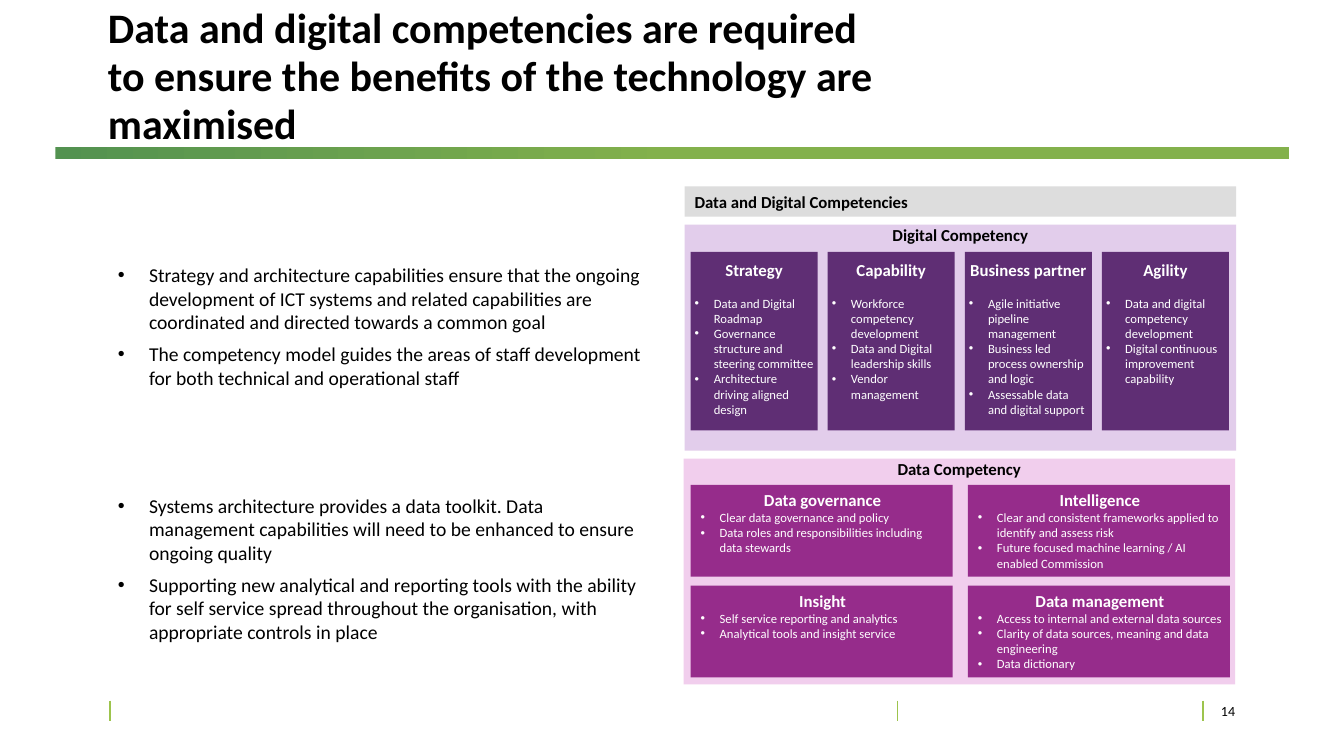
from lxml import etree
from pptx import Presentation
from pptx.dml.color import RGBColor
from pptx.enum.shapes import MSO_CONNECTOR, MSO_SHAPE
from pptx.enum.text import MSO_ANCHOR, MSO_AUTO_SIZE, PP_ALIGN
from pptx.oxml.ns import qn
from pptx.util import Inches, Pt

LEFT, CENTER = PP_ALIGN.LEFT, PP_ALIGN.CENTER
TOP, MIDDLE = MSO_ANCHOR.TOP, MSO_ANCHOR.MIDDLE
RECTANGLE, STRAIGHT = MSO_SHAPE.RECTANGLE, MSO_CONNECTOR.STRAIGHT
NO_AUTOFIT = MSO_AUTO_SIZE.NONE

FONT = "Calibri"
BLACK = RGBColor(0x00, 0x00, 0x00)
WHITE = RGBColor(0xFF, 0xFF, 0xFF)
GREY = RGBColor(0xDD, 0xDD, 0xDD)
LILAC = RGBColor(0xE2, 0xCD, 0xEB)
PINK = RGBColor(0xF1, 0xCE, 0xED)
PURPLE = RGBColor(0x5F, 0x2E, 0x74)
MAGENTA = RGBColor(0x96, 0x2C, 0x8B)
DARK_GREEN = RGBColor(0x53, 0x92, 0x50)
GREEN = RGBColor(0x83, 0xB1, 0x4C)
LIME = RGBColor(0x9D, 0xC4, 0x4D)

# Content
TITLE = ("Data and digital competencies are required to ensure "
         "the benefits of the technology are maximised")
PAGE_NUMBER = "14"
MODEL_HEADING = "Data and Digital Competencies"

# Top and height of each group of points, then its points
POINT_GROUPS = [
    (2.56, 1.5, [
        "Strategy and architecture capabilities ensure that the ongoing development of ICT "
        "systems and related capabilities are coordinated and directed towards a common goal",
        "The competency model guides the areas of staff development for both technical "
        "and operational staff"]),
    (4.85, 1.75, [
        "Systems architecture provides a data toolkit. Data management capabilities will "
        "need to be enhanced to ensure ongoing quality",
        "Supporting new analytical and reporting tools with the ability for self service "
        "spread throughout the organisation, with appropriate controls in place"]),
]

DIGITAL_CARDS = [
    ("Strategy", ["Data and Digital Roadmap",
                  "Governance structure and steering committee",
                  "Architecture driving aligned design"]),
    ("Capability", ["Workforce competency development",
                    "Data and Digital leadership skills",
                    "Vendor management"]),
    ("Business partner", ["Agile initiative pipeline management",
                          "Business led process ownership and logic",
                          "Assessable data and digital support"]),
    ("Agility", ["Data and digital competency development",
                 "Digital continuous improvement capability"]),
]

DATA_CARDS = [
    ("Data governance", ["Clear data governance and policy",
                         "Data roles and responsibilities including data stewards"]),
    ("Intelligence", ["Clear and consistent frameworks applied to identify and assess risk",
                      "Future focused machine learning / AI enabled Commission"]),
    ("Insight", ["Self service reporting and analytics",
                 "Analytical tools and insight service"]),
    ("Data management", ["Access to internal and external data sources",
                         "Clarity of data sources, meaning and data engineering",
                         "Data dictionary"]),
]

# Layout in inches
FOOTER_LINES = [1.09, 8.9, 11.93]
FOOTER_TOP, FOOTER_HEIGHT = 6.95, 0.2
PANEL_WIDTH, PANEL_HEIGHT = 5.47, 2.24
CARD_LEFT = 6.85
DIGITAL_TOP, DIGITAL_STEP = 2.5, 1.36
DATA_TOP, DATA_COLUMN_STEP, DATA_ROW_STEP = 4.81, 2.75, 1.0
DEFAULT_INSETS = (0.1, 0.05, 0.1, 0.05)
PANEL_INSETS = (0.1, 0, 0.1, 0.05)
DIGITAL_INSETS = (0.04, 0.08, 0.04, 0.08)


def set_frame(text_frame, insets=DEFAULT_INSETS, anchor=TOP):
    text_frame.word_wrap = True
    text_frame.auto_size = NO_AUTOFIT
    text_frame.vertical_anchor = anchor
    (text_frame.margin_left, text_frame.margin_top,
     text_frame.margin_right, text_frame.margin_bottom) = [Inches(inset) for inset in insets]


def format_paragraph(paragraph, size, color, bold=False, align=LEFT):
    paragraph.alignment = align
    font = paragraph.font
    font.name, font.size, font.bold = FONT, Pt(size), bold
    font.color.rgb = color
    for run in paragraph.runs:
        run.font.name, run.font.size, run.font.bold = FONT, Pt(size), bold
        run.font.color.rgb = color


def add_bullet(paragraph, indent):
    properties = paragraph._p.get_or_add_pPr()
    properties.set("marL", str(Inches(indent)))
    properties.set("indent", str(-Inches(indent)))
    etree.SubElement(properties, qn("a:buFont")).set("typeface", "Arial")
    etree.SubElement(properties, qn("a:buChar")).set("char", "•")


def add_box(slide, left, top, width, height, color=None):
    box = slide.shapes.add_shape(RECTANGLE, Inches(left), Inches(top),
                                 Inches(width), Inches(height))
    box.shadow.inherit = False
    box.line.fill.background()
    if color is not None:
        box.fill.solid()
        box.fill.fore_color.rgb = color
    return box


def add_heading_box(slide, place, color, heading, insets, text_color=BLACK,
                    align=CENTER, anchor=TOP):
    text_frame = add_box(slide, *place, color).text_frame
    set_frame(text_frame, insets, anchor)
    text_frame.text = heading
    format_paragraph(text_frame.paragraphs[0], 12, text_color, True, align)
    return text_frame


def add_card(slide, place, color, card, insets, indent, gap):
    heading, items = card
    text_frame = add_heading_box(slide, place, color, heading, insets, WHITE)
    for index, item in enumerate(items):
        paragraph = text_frame.add_paragraph()
        paragraph.text = item
        paragraph.space_before = Pt(gap if index == 0 else 0)
        add_bullet(paragraph, indent)
        format_paragraph(paragraph, 9, WHITE)


def add_text_box(slide, left, top, width, height):
    return slide.shapes.add_textbox(Inches(left), Inches(top),
                                    Inches(width), Inches(height)).text_frame


def main():
    presentation = Presentation()
    presentation.slide_width, presentation.slide_height = Inches(13.33), Inches(7.5)
    slide = presentation.slides.add_slide(presentation.slide_layouts[5])

    # Title and green band
    title = slide.shapes.title
    title.left, title.top = Inches(1.07), Inches(0)
    title.width, title.height = Inches(7.82), Inches(1.51)
    set_frame(title.text_frame, (0, 0, 0, 0), MIDDLE)
    title.text_frame.text = TITLE
    title.text_frame.paragraphs[0].line_spacing = Pt(34)
    format_paragraph(title.text_frame.paragraphs[0], 30, BLACK, True)

    band = add_box(slide, 0.55, 1.46, 12.24, 0.12)
    band.fill.gradient()
    band.fill.gradient_angle = 0
    for stop, position, color in zip(band.fill.gradient_stops, (0, 0.5), (DARK_GREEN, GREEN)):
        stop.position = position
        stop.color.rgb = color

    # Footer marks and page number
    for x in FOOTER_LINES:
        mark = slide.shapes.add_connector(STRAIGHT, Inches(x), Inches(FOOTER_TOP),
                                          Inches(x), Inches(FOOTER_TOP + FOOTER_HEIGHT))
        mark.line.color.rgb = LIME
        mark.line.width = Pt(1)
        etree.SubElement(mark._element.spPr, qn("a:effectLst"))
    number_frame = add_text_box(slide, 12.11, FOOTER_TOP, 0.4, FOOTER_HEIGHT)
    set_frame(number_frame, (0, 0, 0, 0), MIDDLE)
    number_frame.text = PAGE_NUMBER
    format_paragraph(number_frame.paragraphs[0], 10, BLACK)

    # Points on the left
    for top, height, points in POINT_GROUPS:
        text_frame = add_text_box(slide, 1.07, top, 5.47, height)
        set_frame(text_frame)
        text_frame.text = "\n".join(points)
        for index, paragraph in enumerate(text_frame.paragraphs):
            paragraph.space_before = Pt(6 if index else 0)
            add_bullet(paragraph, 0.31)
            format_paragraph(paragraph, 14, BLACK)

    # Competency model: heading and panels
    add_heading_box(slide, (6.79, 1.85, PANEL_WIDTH, 0.3), GREY, MODEL_HEADING,
                    DEFAULT_INSETS, align=LEFT, anchor=MIDDLE)
    add_heading_box(slide, (6.79, 2.23, PANEL_WIDTH, PANEL_HEIGHT), LILAC,
                    "Digital Competency", PANEL_INSETS)
    add_heading_box(slide, (6.78, 4.55, PANEL_WIDTH, PANEL_HEIGHT), PINK,
                    "Data Competency", PANEL_INSETS)

    # Cards: one row of four, then a grid of two by two
    for column, card in enumerate(DIGITAL_CARDS):
        place = (CARD_LEFT + column * DIGITAL_STEP, DIGITAL_TOP, 1.26, 1.77)
        add_card(slide, place, PURPLE, card, DIGITAL_INSETS, 0.19, 11)
    for index, card in enumerate(DATA_CARDS):
        row, column = divmod(index, 2)
        place = (CARD_LEFT + column * DATA_COLUMN_STEP, DATA_TOP + row * DATA_ROW_STEP, 2.6, 0.91)
        add_card(slide, place, MAGENTA, card, (0.1, 0.05, 0.08, 0.05), 0.19, 0)

    presentation.save("out.pptx")


if __name__ == "__main__":
    main()
